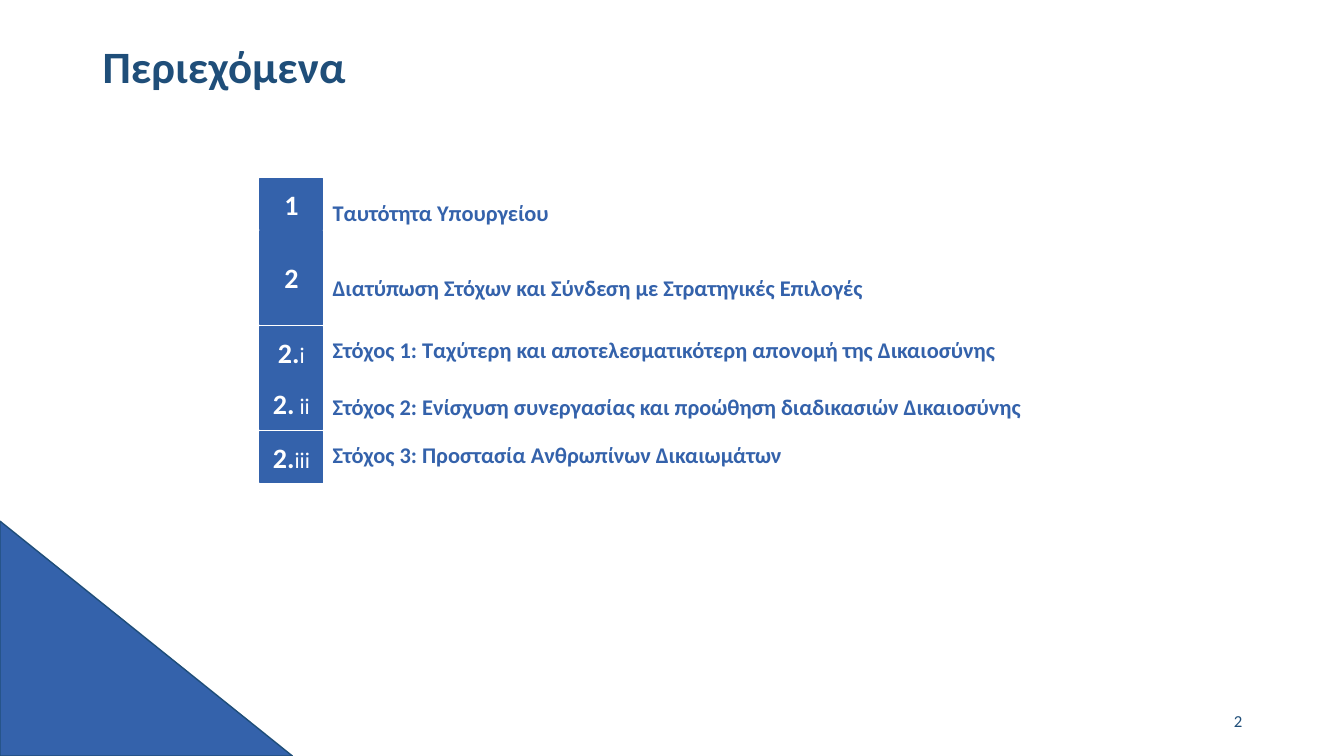
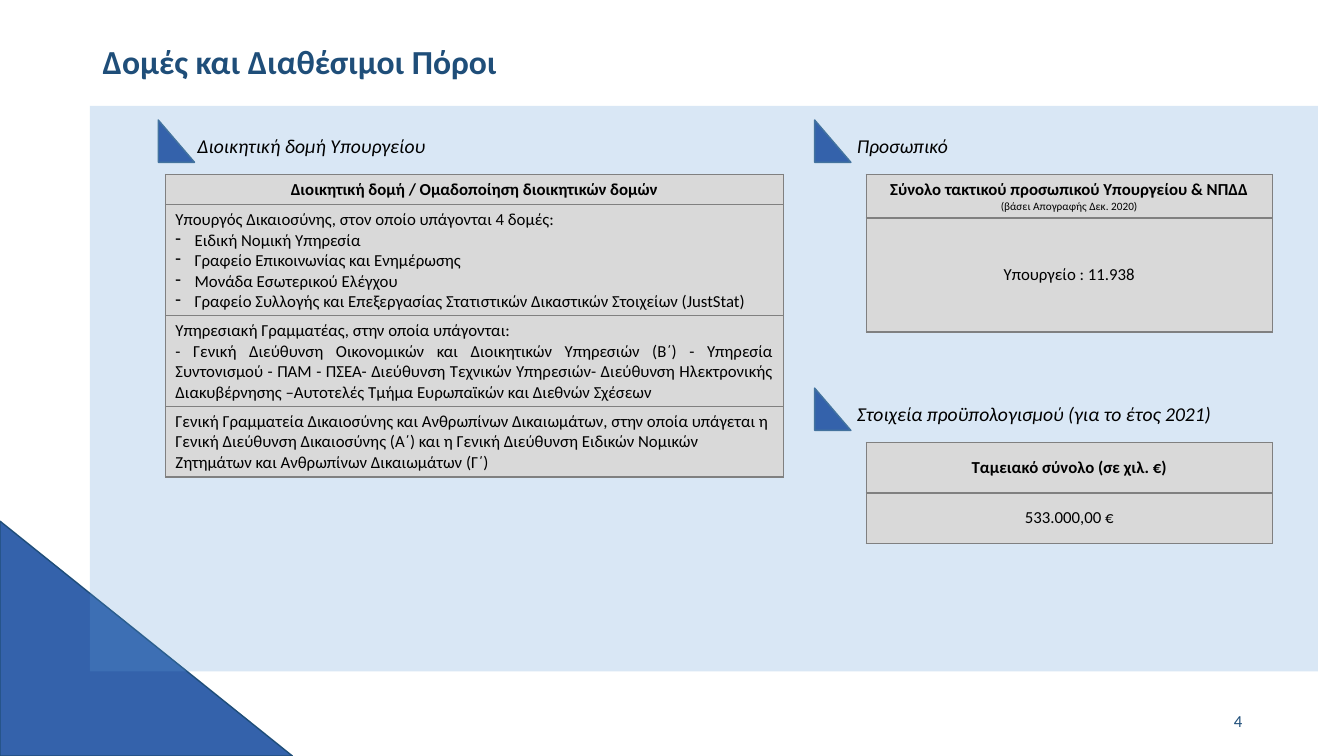
from pptx import Presentation, util as u
from pptx.dml.color import RGBColor
from pptx.enum import shapes, text
from pptx.oxml import parse_xml
from pptx.oxml.ns import nsdecls, qn

PX = 9144
FONT = "Calibri"
BLUE, NAVY, EDGE, SKY = "3462AB", "1F4E79", "43739E", "5B9BD5"
BLACK, WHITE, CELL_GREY, RULE_GREY = "000000", "FFFFFF", "D9D9D9", "808080"
ALIGN = text.PP_ALIGN
RECT = shapes.MSO_SHAPE.RECTANGLE
WEDGE = shapes.MSO_SHAPE.RIGHT_TRIANGLE

BODY = {"size": 12, "color": BLACK}
HEADER = {**BODY, "bold": True}
NOTE = {**BODY, "size": 8}
SUBHEAD = {"size": 14, "color": BLACK, "italic": True}
TITLE = {"size": 32, "color": NAVY, "bold": True}
PAGE = {"size": 12, "color": NAVY}
NUMBER = {"size": 20, "color": WHITE, "bold": True}
NUMERAL = {"size": 16, "color": WHITE}
LABEL = {"size": 16, "color": BLUE, "bold": True}

AGENDA = [
    ("1", "", "Ταυτότητα Υπουργείου", 177, 51, 185),
    ("2", "", "Διατύπωση Στόχων και Σύνδεση με Στρατηγικές Επιλογές", 229, 93, 239),
    ("2.", "i", "Στόχος 1: Ταχύτερη και αποτελεσματικότερη απονομή της Δικαιοσύνης", 324, 51, 321),
    ("2.", " ii", "Στόχος 2: Ενίσχυση συνεργασίας και προώθηση διαδικασιών Δικαιοσύνης", 375, 51, 378),
    ("2.", "iii", "Στόχος 3: Προστασία Ανθρωπίνων Δικαιωμάτων", 428, 51, 425),
]


def para(words, style=BODY, **layout):
    """Describe a paragraph with one run."""
    return {"runs": [(words, style)], **layout}


STRUCTURE = [
    (30, [para("Διοικητική δομή / Ομαδοποίηση διοικητικών δομών", HEADER, align=ALIGN.CENTER)]),
    (110, [para("Υπουργός Δικαιοσύνης, στον οποίο υπάγονται 4 δομές:", align=ALIGN.JUSTIFY)]
     + [para(unit, align=ALIGN.JUSTIFY, bullet="-") for unit in (
         "Ειδική Νομική Υπηρεσία",
         "Γραφείο Επικοινωνίας και Ενημέρωσης",
         "Μονάδα Εσωτερικού Ελέγχου",
         "Γραφείο Συλλογής και Επεξεργασίας Στατιστικών Δικαστικών Στοιχείων (JustStat)")]),
    (90, [para(words, align=ALIGN.JUSTIFY) for words in (
        "Υπηρεσιακή Γραμματέας, στην οποία υπάγονται:",
        "- Γενική Διεύθυνση Οικονομικών και Διοικητικών Υπηρεσιών (Β΄) - Υπηρεσία "
        "Συντονισμού - ΠΑΜ - ΠΣΕΑ- Διεύθυνση Τεχνικών Υπηρεσιών- Διεύθυνση Ηλεκτρονικής "
        "Διακυβέρνησης –Αυτοτελές Τμήμα Ευρωπαϊκών και Διεθνών Σχέσεων")]),
    (70, [para(
        "Γενική Γραμματεία Δικαιοσύνης και Ανθρωπίνων Δικαιωμάτων, στην οποία υπάγεται η "
        "Γενική Διεύθυνση Δικαιοσύνης (Α΄) και η Γενική Διεύθυνση Ειδικών Νομικών "
        "Ζητημάτων και Ανθρωπίνων Δικαιωμάτων (Γ΄)")]),
]
STAFF = [
    (43, [para("Σύνολο τακτικού προσωπικού Υπουργείου & ΝΠΔΔ", HEADER, align=ALIGN.CENTER),
          para("(βάσει Απογραφής Δεκ. 2020)", NOTE, align=ALIGN.CENTER)]),
    (113, [para("Υπουργείο : 11.938", align=ALIGN.CENTER)]),
]
BUDGET = [
    (50, [para("Ταμειακό σύνολο (σε χιλ. €)", HEADER, align=ALIGN.CENTER)]),
    (50, [para("533.000,00 €", align=ALIGN.CENTER)]),
]
SECTIONS = [
    ("Διοικητική δομή Υπουργείου", 157, 119, 29, 592, 164, 613, STRUCTURE),
    ("Προσωπικό", 808, 119, 32, 394, 859, 403, STAFF),
    ("Στοιχεία προϋπολογισμού (για το έτος 2021)", 808, 385, 32, 422, 859, 403, BUDGET),
]


def rgb(code):
    """Turn a hex string into a colour."""
    return RGBColor.from_string(code)


def px(*lengths):
    """Convert pixel lengths to EMU."""
    return [u.Emu(length * PX) for length in lengths]


def style_run(run, style):
    """Apply a dict of format values to a run."""
    values = {**style, "name": FONT, "size": u.Pt(style["size"])}
    run.font.color.rgb = rgb(values.pop("color"))
    for attribute, value in values.items():
        setattr(run.font, attribute, value)


def write(frame, paragraphs):
    """Fill a text frame with described paragraphs."""
    for index, content in enumerate(paragraphs):
        paragraph = frame.add_paragraph() if index else frame.paragraphs[0]
        paragraph.alignment = content.get("align", ALIGN.LEFT)
        paragraph.line_spacing = content.get("spacing")
        if "bullet" in content:
            properties = paragraph._p.get_or_add_pPr()
            indent = 19 * PX
            properties.set("marL", str(indent))
            properties.set("indent", str(-indent))
            properties.append(parse_xml(
                f'<a:buChar {nsdecls("a")} char="{content["bullet"]}"/>'))
        for words, style in content["runs"]:
            run = paragraph.add_run()
            run.text = words
            style_run(run, style)


def add_text(parent, box, paragraph, anchor=text.MSO_ANCHOR.MIDDLE):
    """Add a wrapping text box."""
    frame = parent.shapes.add_textbox(*px(*box)).text_frame
    frame.word_wrap = True
    frame.vertical_anchor = anchor
    write(frame, [paragraph])


def add_block(parent, kind, box, fill, line=None, alpha=None):
    """Add a filled preset shape."""
    block = parent.shapes.add_shape(kind, *px(*box))
    block.shadow.inherit = False
    block.fill.solid()
    block.fill.fore_color.rgb = rgb(fill)
    if line:
        block.line.color.rgb = rgb(line)
        block.line.width = u.Pt(1)
    else:
        block.line.fill.background()
    if alpha:
        tint = block._element.spPr.find(qn("a:solidFill"))[0]
        tint.append(parse_xml(f'<a:alpha {nsdecls("a")} val="{alpha * 1000}"/>'))
    return block


def add_grid(slide, left, top, width, rows):
    """Add a one-column bordered table."""
    height = sum(row_height for row_height, _ in rows)
    table = slide.shapes.add_table(len(rows), 1, *px(left, top, width, height)).table
    table.first_row = table.horz_banding = False
    for index, (row_height, paragraphs) in enumerate(rows):
        table.rows[index].height = px(row_height)[0]
        cell = table.cell(index, 0)
        cell.vertical_anchor = text.MSO_ANCHOR.MIDDLE
        for side in "LRTB":
            cell._tc.get_or_add_tcPr().append(parse_xml(
                f'<a:ln{side} {nsdecls("a")} w="12700"><a:solidFill>'
                f'<a:srgbClr val="{RULE_GREY}"/></a:solidFill></a:ln{side}>'))
        cell.fill.solid()
        cell.fill.fore_color.rgb = rgb(CELL_GREY)
        write(cell.text_frame, paragraphs)


def add_slide(deck, title, title_top, title_size, page):
    """Add a slide with the shared corner, title and page number."""
    slide = deck.slides.add_slide(deck.slide_layouts[6])
    add_block(slide, WEDGE, (0, 517, 290, 233), BLUE, NAVY)
    add_text(slide, (92, title_top, 1150, 81),
             para(title, {**TITLE, "size": title_size}, spacing=0.9))
    add_text(slide, (942, 695, 300, 40), para(page, PAGE, align=ALIGN.RIGHT))
    return slide


def add_agenda_item(slide, number, numeral, label, top, height, label_top):
    """Add a numbered contents entry as a group."""
    entry = slide.shapes.add_group_shape()
    badge = add_block(entry, RECT, (258, top, 62, height), BLUE, BLUE).text_frame
    badge.margin_left = badge.margin_right = 0
    badge.vertical_anchor = text.MSO_ANCHOR.MIDDLE
    runs = [(number, NUMBER)] + ([(numeral, NUMERAL)] if numeral else [])
    write(badge, [{"runs": runs, "align": ALIGN.CENTER}])
    add_text(entry, (320, label_top, 779, height), para(label, LABEL))


def add_section(slide, heading, left, top, offset, width, grid_left, grid_width, rows):
    """Add a marked heading with its table."""
    add_block(slide, WEDGE, (left, top, 36, 42), BLUE, EDGE)
    add_text(slide, (left + offset, top + 9, width, 34), para(heading, SUBHEAD),
             text.MSO_ANCHOR.TOP)
    add_grid(slide, grid_left, top + 54, grid_width, rows)


def main():
    """Build and save the deck."""
    deck = Presentation()
    deck.slide_width, deck.slide_height = px(1333, 750)

    contents = add_slide(deck, "Περιεχόμενα", 28, 32, "2")
    for item in AGENDA:
        add_agenda_item(contents, *item)

    resources = add_slide(deck, "Δομές και Διαθέσιμοι Πόροι", 23, 24, "4")
    add_block(resources, RECT, (89, 105, 1218, 561), SKY, alpha=23)
    for section in SECTIONS:
        add_section(resources, *section)

    deck.save("out.pptx")


if __name__ == "__main__":
    main()
